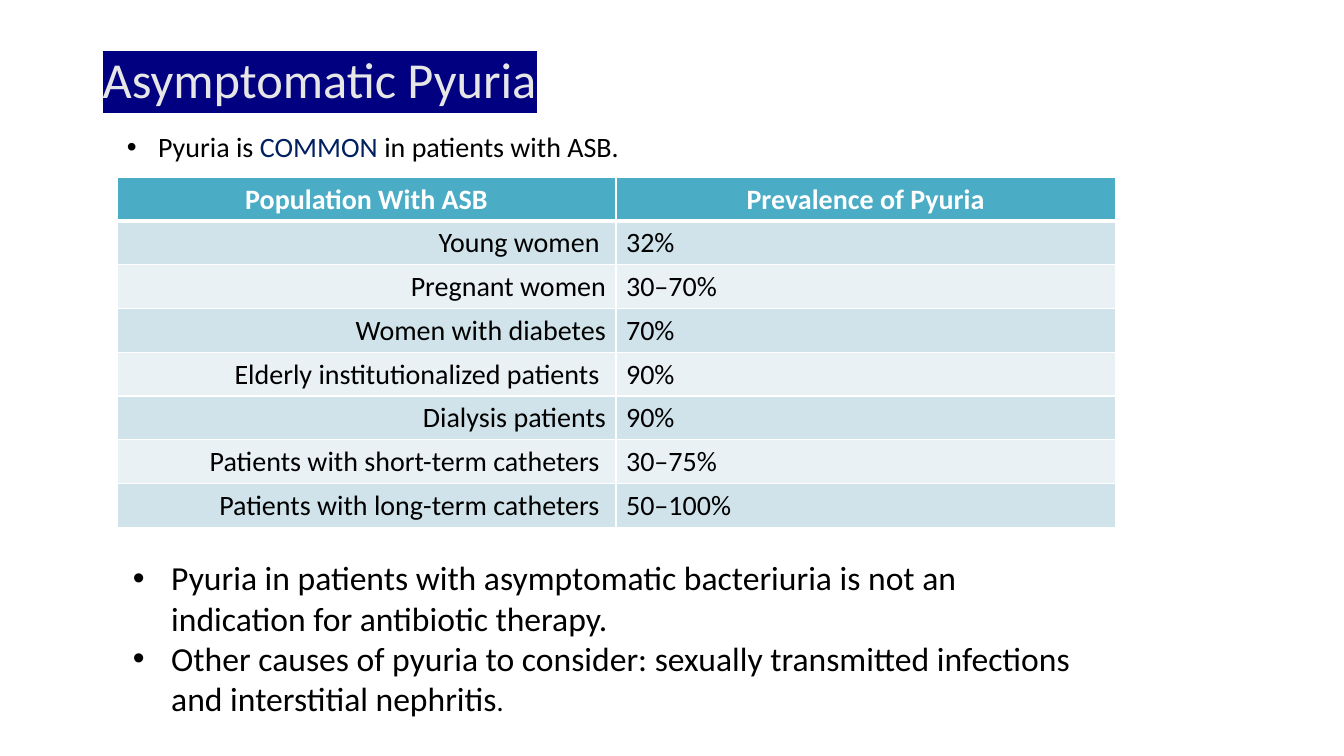
from lxml.etree import SubElement
from pptx import Presentation
from pptx.dml.color import RGBColor
from pptx.enum.text import MSO_ANCHOR, PP_ALIGN
from pptx.oxml import parse_xml
from pptx.oxml.ns import nsdecls, qn
from pptx.util import Inches, Pt

FONT = "Calibri"
BLACK = RGBColor(0x00, 0x00, 0x00)
WHITE = RGBColor(0xFF, 0xFF, 0xFF)
TITLE_GRAY = RGBColor(0xE7, 0xE6, 0xE6)
TITLE_NAVY = RGBColor(0x00, 0x00, 0x80)
EMPHASIS_NAVY = RGBColor(0x00, 0x20, 0x60)
HEADER_TEAL = RGBColor(0x4B, 0xAC, 0xC6)
BAND_DARK = RGBColor(0xD0, 0xE3, 0xEA)
BAND_LIGHT = RGBColor(0xE9, 0xF1, 0xF5)

PREVALENCE = [
    ("Population With ASB", "Prevalence of Pyuria"),
    ("Young women ", "32%"),
    ("Pregnant women", "30–70%"),
    ("Women with diabetes", "70%"),
    ("Elderly institutionalized patients ", "90%"),
    ("Dialysis patients", "90%"),
    ("Patients with short-term catheters ", "30–75%"),
    ("Patients with long-term catheters ", "50–100%"),
]
FINDING = [[("Pyuria is ", 20, BLACK), ("COMMON ", 20, EMPHASIS_NAVY),
            ("in patients with ASB.", 20, BLACK)]]
ADVICE = [
    [("Pyuria in patients with asymptomatic bacteriuria is not an "
      "indication for antibiotic therapy.", 24, BLACK)],
    [("Other causes of pyuria to consider: sexually transmitted infections "
      "and interstitial nephritis", 24, BLACK), (".", 20, BLACK)],
]


def style_run(run, size, color, bold=False):
    run.font.name = FONT
    run.font.size = Pt(size)
    run.font.bold = bold
    run.font.color.rgb = color


def add_text_frame(slide, box):
    frame = slide.shapes.add_textbox(*map(Inches, box)).text_frame
    frame.word_wrap = True
    return frame


def add_title(slide, box, title):
    frame = add_text_frame(slide, box)
    frame.vertical_anchor = MSO_ANCHOR.MIDDLE
    heading = frame.paragraphs[0]
    heading.text = title
    heading.line_spacing = 0.9
    run = heading.runs[0]
    style_run(run, 36, TITLE_GRAY)
    highlight = parse_xml(
        f'<a:highlight {nsdecls("a")}><a:srgbClr val="{TITLE_NAVY}"/></a:highlight>')
    run.font._element.find(qn("a:solidFill")).addnext(highlight)


def add_bullets(slide, box, bullets, indent):
    frame = add_text_frame(slide, box)
    for index, pieces in enumerate(bullets):
        bullet = frame.add_paragraph() if index else frame.paragraphs[0]
        properties = bullet._p.get_or_add_pPr()
        properties.set("marL", str(Inches(indent)))
        properties.set("indent", str(-Inches(indent)))
        SubElement(properties, qn("a:buFont"), typeface="Arial")
        SubElement(properties, qn("a:buChar"), char="•")
        for words, size, color in pieces:
            run = bullet.add_run()
            run.text = words
            style_run(run, size, color)


def set_borders(cell, top, bottom):
    properties = cell._tc.get_or_add_tcPr()
    widths = {"lnL": 1, "lnR": 1, "lnT": top, "lnB": bottom}
    for position, (side, width) in enumerate(widths.items()):
        properties.insert(position, parse_xml(
            f'<a:{side} {nsdecls("a")} w="{Pt(width)}"><a:solidFill>'
            f'<a:srgbClr val="{WHITE}"/></a:solidFill></a:{side}>'))


def add_prevalence_table(slide, box, rows):
    table = slide.shapes.add_table(len(rows), len(rows[0]), *map(Inches, box)).table
    for row in table.rows:
        row.height = Inches(box[3] / len(rows))
    for r, values in enumerate(rows):
        header = r == 0
        band = BAND_DARK if r % 2 else BAND_LIGHT
        for c, value in enumerate(values):
            cell = table.cell(r, c)
            cell.fill.solid()
            cell.fill.fore_color.rgb = HEADER_TEAL if header else band
            set_borders(cell, 3 if r == 1 else 1, 3 if header else 1)
            entry = cell.text_frame.paragraphs[0]
            entry.text = value
            body_align = PP_ALIGN.LEFT if c else PP_ALIGN.RIGHT
            entry.alignment = PP_ALIGN.CENTER if header else body_align
            style_run(entry.runs[0], 20, WHITE if header else BLACK, header)


def main():
    deck = Presentation()
    deck.slide_width = Inches(13.33)
    deck.slide_height = Inches(7.5)
    slide = deck.slides.add_slide(deck.slide_layouts[6])
    add_title(slide, (0.92, 0.4, 11.5, 0.84), "Asymptomatic Pyuria")
    add_bullets(slide, (1.16, 1.24, 9.5, 0.44), FINDING, 0.31)
    add_prevalence_table(slide, (1.16, 1.76, 9.9, 3.47), PREVALENCE)
    add_bullets(slide, (1.22, 5.48, 9.72, 1.72), ADVICE, 0.38)
    deck.save("out.pptx")


if __name__ == "__main__":
    main()
